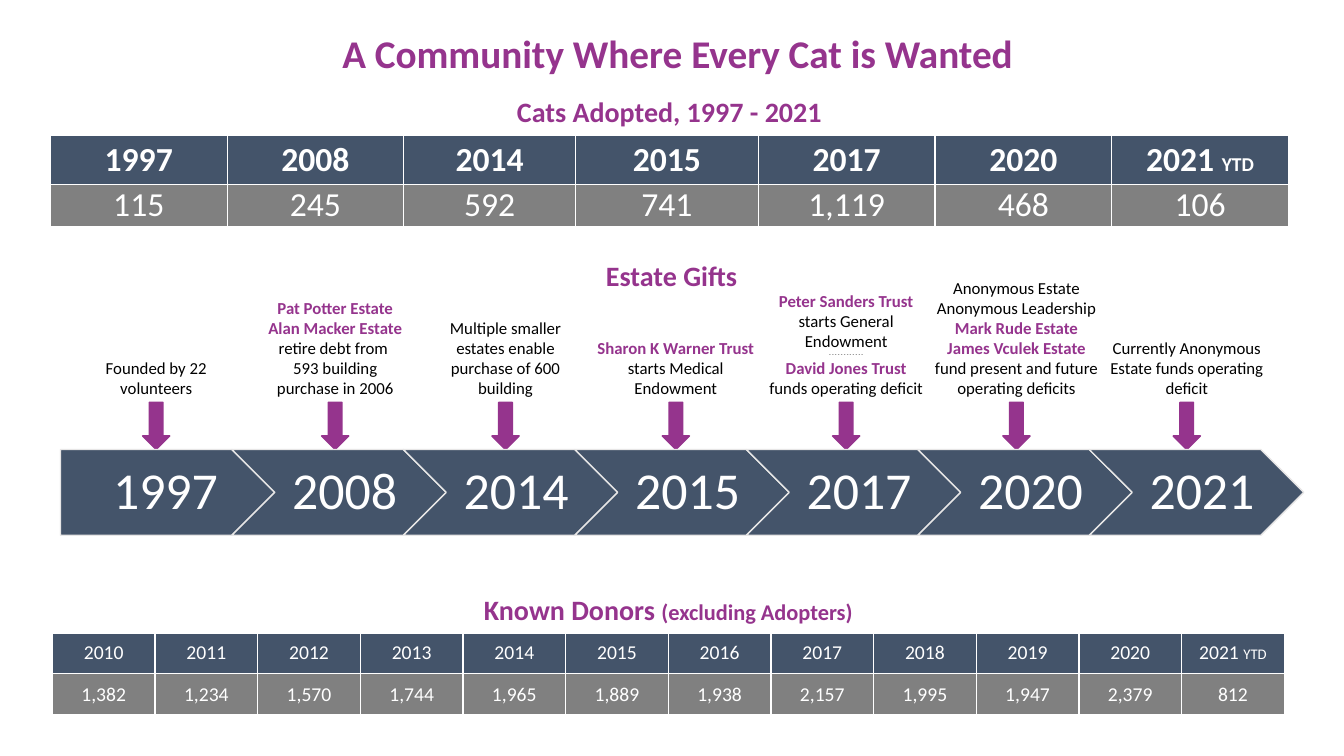
from collections import namedtuple
from lxml.etree import SubElement
from pptx import Presentation
from pptx.dml.color import RGBColor
from pptx.enum.shapes import MSO_SHAPE as Preset
from pptx.enum.text import MSO_ANCHOR as Anchor, PP_ALIGN as Align
from pptx.oxml.ns import qn
from pptx.util import Inches, Pt

Box = namedtuple("Box", "left top width height")
PLUM, NAVY, GRAY = "95348D", "44546A", "808080"
WHITE, BLACK, PALE = "FFFFFF", "000000", "E7E6E6"


def color(hex_code):
    return RGBColor.from_string(hex_code)


def emu(box):
    return [Inches(length) for length in box]


def write(frame, paragraphs, anchor, margins=(0.1, 0.05, 0.1, 0.05), spacing=None):
    frame.word_wrap = True
    frame.vertical_anchor = anchor
    (frame.margin_left, frame.margin_top,
     frame.margin_right, frame.margin_bottom) = emu(margins)
    for index, runs in enumerate(paragraphs):
        paragraph = frame.add_paragraph() if index else frame.paragraphs[0]
        paragraph.alignment = Align.CENTER
        paragraph.line_spacing = spacing
        for words, size, ink, bold in runs:
            for number, line in enumerate(words.split("\n")):
                if number:
                    paragraph.add_line_break()
                if line:
                    run = paragraph.add_run()
                    run.text = line
                    run.font.name = "Calibri"
                    run.font.size = Pt(size)
                    run.font.bold = bold
                    run.font.color.rgb = color(ink)


def add_text(slide, box, paragraphs, anchor=Anchor.TOP):
    write(slide.shapes.add_textbox(*emu(box)).text_frame, paragraphs, anchor)


def add_preset(slide, preset, box, fill, line):
    shape = slide.shapes.add_shape(preset, *emu(box))
    shape.shadow.inherit = False
    shape.fill.solid()
    shape.fill.fore_color.rgb = color(fill)
    shape.line.color.rgb = color(line)
    shape.line.width = Pt(1)
    return shape


def set_borders(cell, bottom):
    properties = cell._tc.get_or_add_tcPr()
    for position, (side, points) in enumerate(
            [("lnL", 1), ("lnR", 1), ("lnT", 1), ("lnB", bottom)]):
        line = properties.makeelement(qn("a:" + side), {"w": str(Pt(points))})
        fill = SubElement(line, qn("a:solidFill"))
        SubElement(fill, qn("a:srgbClr"), val=WHITE)
        properties.insert(position, line)


def add_counts(slide, box, caption, columns, rows, years, counts, sizes, bold, margins):
    frame = slide.shapes.add_table(3, len(years), *emu(box))
    table = frame.table
    table.first_row = table.horz_banding = False
    for column, share in zip(table.columns, columns):
        column.width = Inches(box.width * share / sum(columns))
    for row, share in zip(table.rows, rows):
        row.height = Inches(box.height * share / sum(rows))

    table.cell(0, 0).merge(table.cell(0, len(years) - 1))
    for cell in table.iter_cells():
        cell.fill.background()
    write_cell(table.cell(0, 0), [caption], (0.05,) * 4)

    size, small = sizes
    for index, (year, count) in enumerate(zip(years, counts)):
        head = [(year, size, WHITE, bold)]
        if index == len(years) - 1:
            head = [(year + " ", size, WHITE, bold), ("YTD", small, WHITE, bold)]
        for row, runs, fill in [(1, head, NAVY), (2, [(count, size, WHITE, False)], GRAY)]:
            cell = table.cell(row, index)
            cell.fill.solid()
            cell.fill.fore_color.rgb = color(fill)
            write_cell(cell, [runs], margins)
    for index, cell in enumerate(table.iter_cells()):
        set_borders(cell, 3 if index < len(years) else 1)


def write_cell(cell, paragraphs, margins):
    write(cell.text_frame, paragraphs, Anchor.MIDDLE, margins)
    cell.vertical_anchor = Anchor.MIDDLE
    (cell.margin_left, cell.margin_top,
     cell.margin_right, cell.margin_bottom) = emu(margins)


def add_timeline(slide, box, years):
    step_share = 0.8
    width = box.width / (1 + step_share * (len(years) - 1))
    for index, year in enumerate(years):
        preset, inset = (Preset.CHEVRON, 0.16) if index else (Preset.PENTAGON, 0.22)
        step = Box(box.left + index * step_share * width, box.top, width, box.height)
        shape = add_preset(slide, preset, step, NAVY, PALE)
        write(shape.text_frame, [[(year, 37, WHITE, False)]], Anchor.MIDDLE,
              (inset, 0.11, 0.05, 0.11), 0.9)


def add_gifts(slide, box, gifts):
    first, second, pitch = 0.077, 0.221, 0.137
    note_height = box.height * 0.74
    arrow_width, arrow_height = 0.27, box.height * 0.265
    for index, (width, paragraphs) in enumerate(gifts):
        share = second + pitch * (index - 1) if index else first
        center = box.left + box.width * share
        add_text(slide, Box(center - width / 2, box.top, width, note_height),
                 paragraphs, Anchor.BOTTOM)
        arrow = Box(center - arrow_width / 2, box.top + box.height - arrow_height,
                    arrow_width, arrow_height)
        add_preset(slide, Preset.DOWN_ARROW, arrow, PLUM, PLUM)


def plain(words):
    return words, 12, BLACK, False


def donor(words):
    return words, 12, PLUM, True


GIFTS = [
    (1.52, [[plain("Founded by 22 volunteers")]]),
    (1.58, [[donor("Pat Potter Estate Alan Macker Estate"),
             plain(" retire debt from  593 building purchase in 2006")]]),
    (1.64, [[plain("Multiple smaller estates enable purchase of 600 building")]]),
    (1.83, [[donor("Sharon K Warner Trust")], [plain("starts Medical Endowment")]]),
    (1.91, [[donor("Peter Sanders Trust "), plain("starts General Endowment")],
            [("- - - - - - - - - - - -", 4, BLACK, False)],
            [donor("David Jones Trust")],
            [plain("funds operating deficit")]]),
    (1.85, [[plain("Anonymous Estate\nAnonymous Leadership\n"), donor("Mark Rude Estate")],
            [donor("James Vculek Estate\n"),
             plain("fund present and future operating deficits")]]),
    (1.75, [[plain("Currently Anonymous")], [plain("Estate funds operating deficit")]]),
]
MILESTONES = ["1997", "2008", "2014", "2015", "2017", "2020", "2021"]
ADOPTED = ["115", "245", "592", "741", "1,119", "468", "106"]
DONOR_YEARS = [str(year) for year in range(2010, 2022)]
DONORS = ["1,382", "1,234", "1,570", "1,744", "1,965", "1,889",
          "1,938", "2,157", "1,995", "1,947", "2,379", "812"]


def main():
    deck = Presentation()
    deck.slide_width, deck.slide_height = Inches(13.33), Inches(7.5)
    slide = deck.slides.add_slide(deck.slide_layouts[6])

    add_text(slide, Box(0.35, 0.24, 12.74, 0.57),
             [[("A Community Where Every Cat is Wanted", 28, PLUM, True)]], Anchor.MIDDLE)
    add_counts(slide, Box(0.5, 0.9, 12.28, 1.34),
               [("Cats Adopted, 1997 - 2021", 20, PLUM, True)],
               [1.75, 1.75, 1.7, 1.81, 1.75, 1.75, 1.75], [0.43, 0.5, 0.41],
               MILESTONES, ADOPTED, (24, 14), True, (0, 0, 0, 0))
    add_text(slide, Box(0.52, 2.52, 12.28, 0.44), [[("Estate Gifts", 20, PLUM, True)]])
    add_gifts(slide, Box(0.6, 2.69, 12.33, 1.77), GIFTS)
    add_timeline(slide, Box(0.6, 4.46, 12.33, 0.85), MILESTONES)
    add_counts(slide, Box(0.52, 5.84, 12.22, 1.25),
               [("Known Donors ", 20, PLUM, True), ("(excluding Adopters)", 16, PLUM, True)],
               [1] * len(DONOR_YEARS), [0.43, 0.41, 0.41],
               DONOR_YEARS, DONORS, (14, 10.5), False, (0.1, 0.05, 0.1, 0.05))
    deck.save("out.pptx")


if __name__ == "__main__":
    main()
